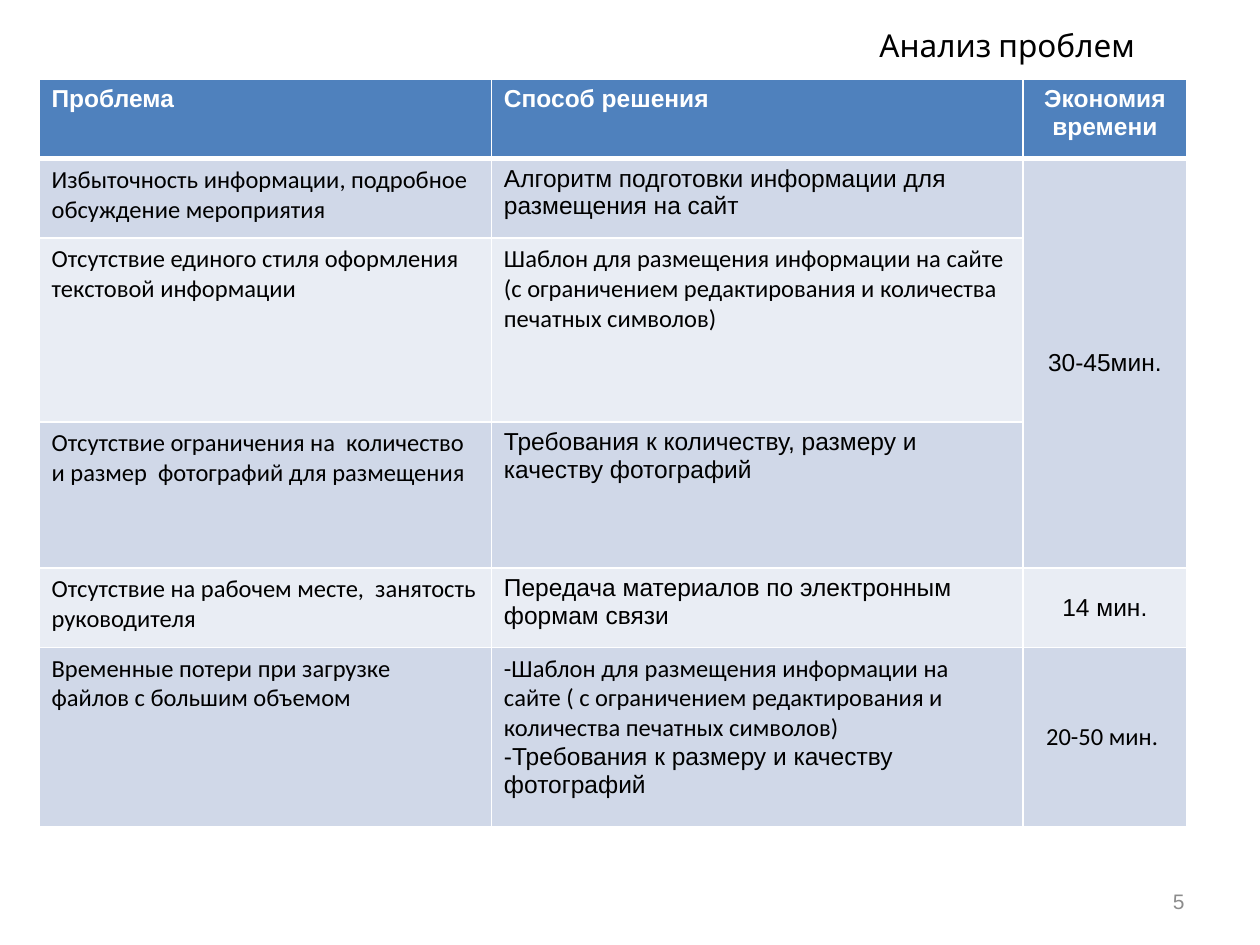
from lxml.etree import SubElement
from pptx import Presentation
from pptx.dml.color import RGBColor
from pptx.enum.text import MSO_ANCHOR as Anchor, MSO_AUTO_SIZE as AutoSize, PP_ALIGN as Align
from pptx.oxml.ns import qn
from pptx.util import Inches, Pt

TITLE = "Анализ проблем"
PAGE_NUMBER = "5"
HEADERS = ["Проблема", "Способ решения", "Экономия времени"]
ROWS = [
    ([("Избыточность информации, подробное обсуждение мероприятия", "Calibri")],
     [("Алгоритм подготовки информации для размещения на сайт", "Arial")],
     [("30-45мин.", "Arial")]),
    ([("Отсутствие единого стиля оформления текстовой информации", "Calibri")],
     [("Шаблон для размещения информации на сайте (с ограничением редактирования "
       "и количества печатных символов)", "Calibri")],
     []),
    ([("Отсутствие ограничения на  количество \nи размер  фотографий для размещения", "Calibri")],
     [("Требования к количеству, размеру и качеству фотографий", "Arial")],
     []),
    ([("Отсутствие на рабочем месте,  занятость руководителя", "Calibri")],
     [("Передача материалов по электронным формам связи", "Arial")],
     [("14 мин.", "Arial")]),
    ([("Временные потери при загрузке  файлов с большим объемом", "Calibri")],
     [("-Шаблон для размещения информации на сайте ( с ограничением редактирования "
       "и количества печатных символов)", "Calibri"),
      ("-Требования к размеру и качеству фотографий", "Arial")],
     [("20-50 мин. ", "Calibri")]),
]
COLUMN_WIDTHS = [3.59, 4.22, 1.3]
ROW_HEIGHTS = [0.63, 0.63, 1.46, 1.16, 0.63, 1.42]
HEADER_FILL = "4F81BD"
BAND_FILLS = ["D0D8E8", "E9EDF4"]
WHITE, BLACK, GREY = "FFFFFF", "000000", "8C8C8C"


def color(value):
    return RGBColor.from_string(value)


def write(frame, paragraphs, size, ink, align=Align.LEFT, bold=False):
    for index, (text, font) in enumerate(paragraphs):
        para = frame.paragraphs[0] if index == 0 else frame.add_paragraph()
        para.alignment = align
        for number, line in enumerate(text.split("\n")):
            if number:
                para.add_line_break()
            span = para.add_run()
            span.text = line
            span.font.name = font
            span.font.size = Pt(size)
            span.font.bold = bold
            span.font.color.rgb = color(ink)


def set_borders(cell, bottom):
    properties = cell._tc.get_or_add_tcPr()
    for side, width in (("L", 1), ("R", 1), ("T", 1), ("B", bottom)):
        line = SubElement(properties, qn(f"a:ln{side}"), w=str(Pt(width)))
        fill = SubElement(line, qn("a:solidFill"))
        SubElement(fill, qn("a:srgbClr"), val=WHITE)


def add_problem_table(page):
    table = page.shapes.add_table(
        len(ROW_HEIGHTS), len(COLUMN_WIDTHS), Inches(0.31), Inches(0.63),
        Inches(sum(COLUMN_WIDTHS)), Inches(sum(ROW_HEIGHTS))).table
    for column, width in zip(table.columns, COLUMN_WIDTHS):
        column.width = Inches(width)
    for row, height in zip(table.rows, ROW_HEIGHTS):
        row.height = Inches(height)
    contents = [[[(text, "Arial")] for text in HEADERS], *ROWS]
    for r, row in enumerate(contents):
        header = r == 0
        for c, paragraphs in enumerate(row):
            cell = table.cell(r, c)
            set_borders(cell, 3 if header else 1)
            cell.fill.solid()
            cell.fill.fore_color.rgb = color(HEADER_FILL if header else BAND_FILLS[(r - 1) % 2])
            last = c == len(row) - 1
            if last and not header:
                cell.vertical_anchor = Anchor.MIDDLE
            write(cell.text_frame, paragraphs, 14, WHITE if header else BLACK,
                  Align.CENTER if last else Align.LEFT, header)
    table.cell(1, 2).merge(table.cell(3, 2))


def add_title(page):
    title = page.shapes.title
    title.left, title.top = Inches(6.88), Inches(0.16)
    title.width, title.height = Inches(3.12), Inches(0.4)
    frame = title.text_frame
    frame.auto_size = AutoSize.NONE
    frame.vertical_anchor = Anchor.TOP
    write(frame, [(TITLE, "Cabin")], 18, BLACK)


def add_page_number(page):
    box = page.shapes.add_textbox(Inches(7.17), Inches(6.95), Inches(2.33), Inches(0.4))
    frame = box.text_frame
    frame.word_wrap = True
    frame.vertical_anchor = Anchor.MIDDLE
    write(frame, [(PAGE_NUMBER, "Arial")], 12, GREY, Align.RIGHT)


def main():
    deck = Presentation()
    deck.slide_width, deck.slide_height = Inches(10), Inches(7.5)
    page = deck.slides.add_slide(deck.slide_layouts[5])
    add_problem_table(page)
    add_page_number(page)
    add_title(page)
    deck.save("out.pptx")


if __name__ == "__main__":
    main()
